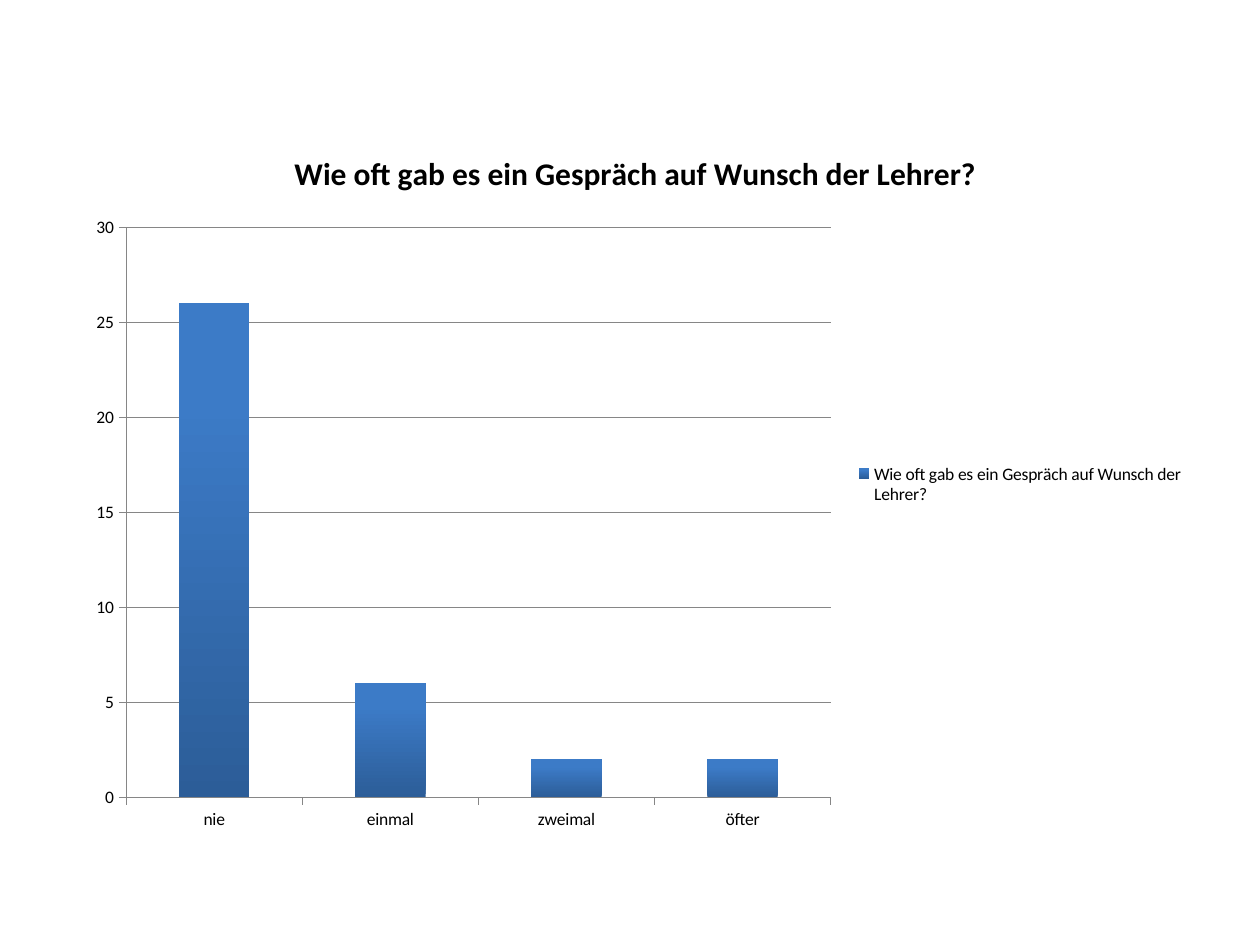
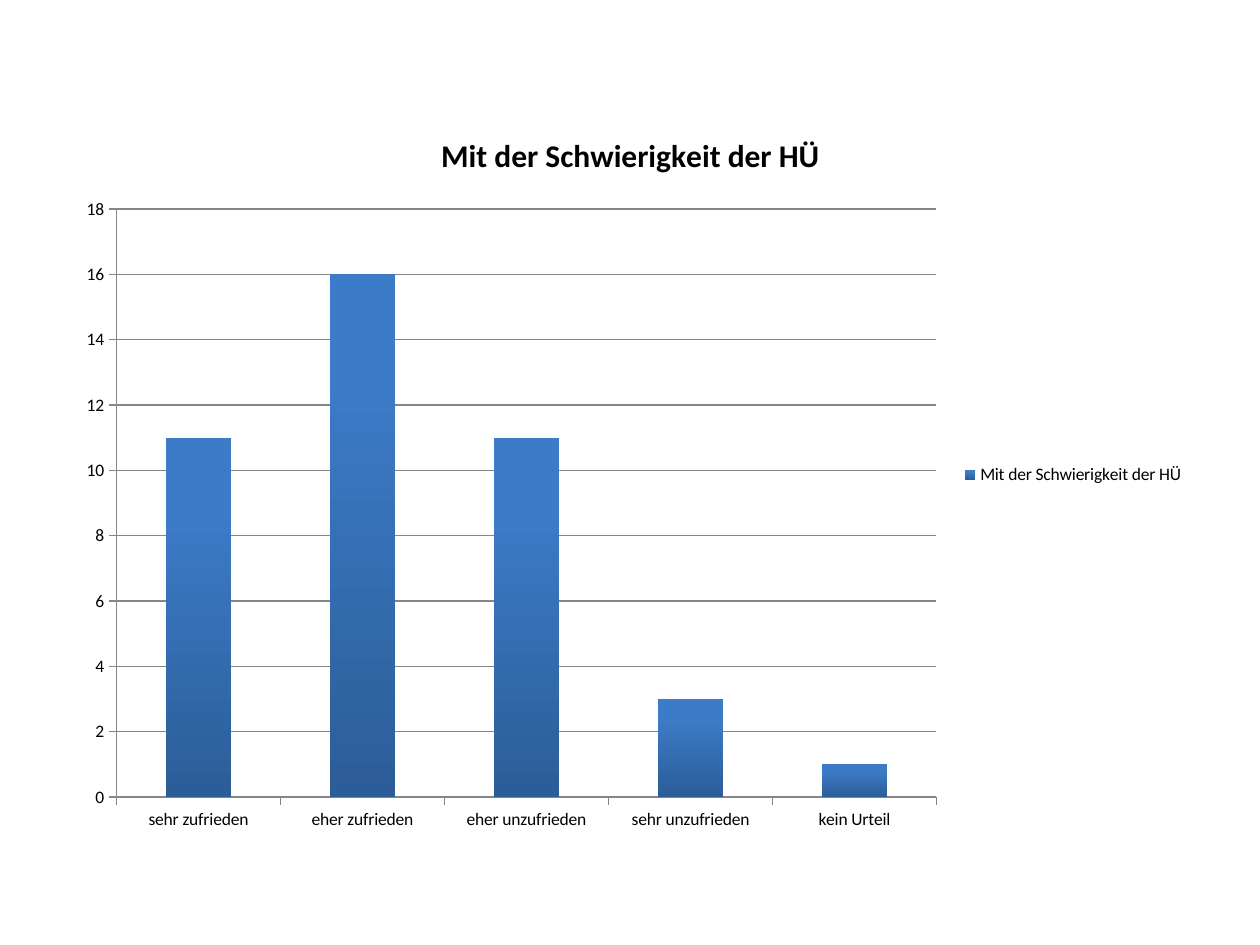
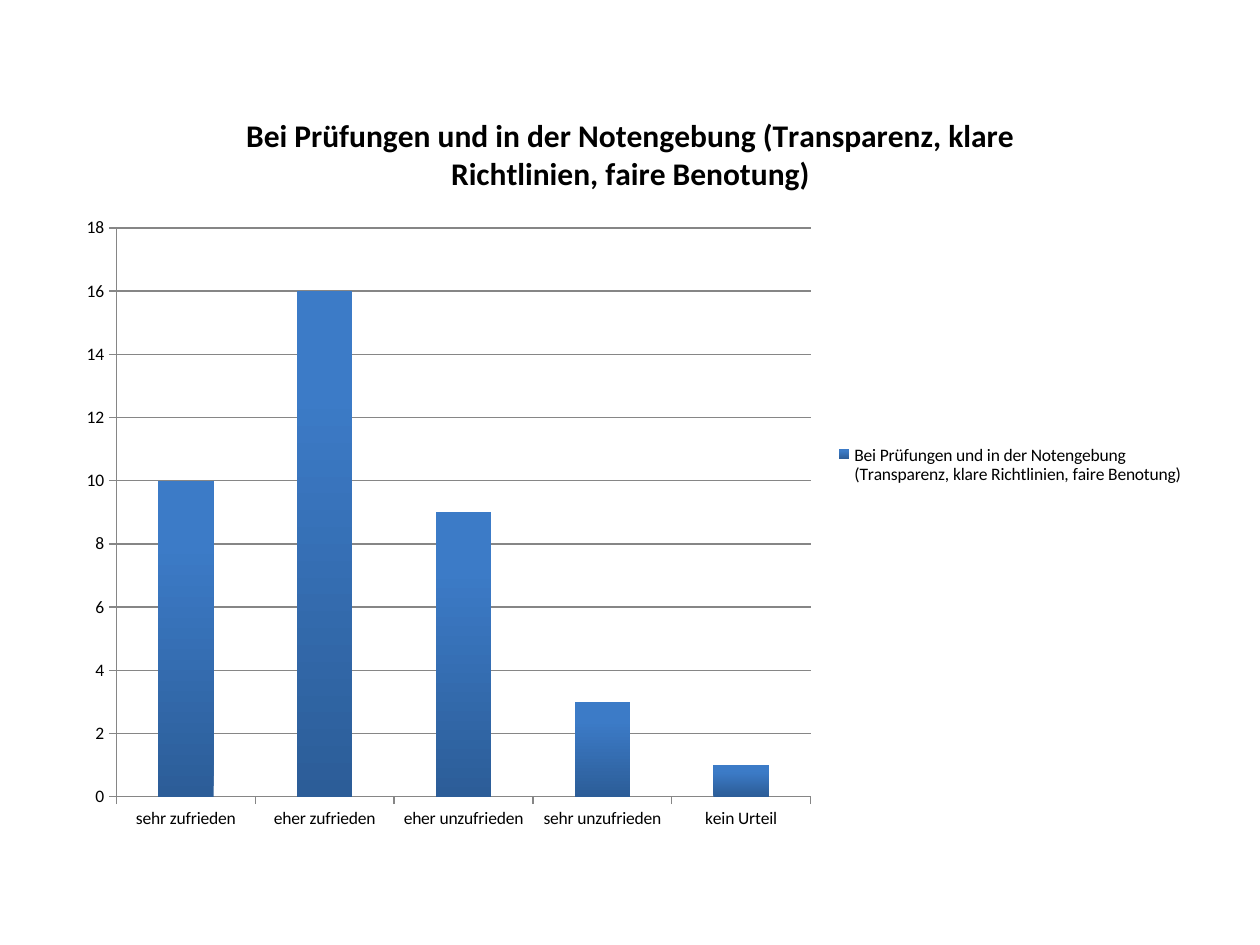
from dataclasses import dataclass

from pptx import Presentation
from pptx.chart.data import CategoryChartData
from pptx.dml.color import RGBColor
from pptx.enum.chart import XL_CHART_TYPE, XL_LEGEND_POSITION, XL_TICK_MARK
from pptx.util import Emu, Pt

PX_PER_INCH = 126
RIGHT, BOTTOM = 1197, 844


@dataclass(frozen=True)
class Theme:
    font: str = "Calibri"
    text: RGBColor = RGBColor.from_string("000000")
    line: RGBColor = RGBColor.from_string("868686")
    bar_bottom: RGBColor = RGBColor.from_string("2C5D98")
    bar_top: RGBColor = RGBColor.from_string("3C7BC7")
    title_size: int = 18
    label_size: int = 10
    gap_width: int = 150


THEME = Theme()
FREQUENCY = ("nie", "einmal", "zweimal", "öfter")
SATISFACTION = ("sehr zufrieden", "eher zufrieden", "eher unzufrieden",
                "sehr unzufrieden", "kein Urteil")


@dataclass(frozen=True)
class Question:
    wording: str
    answers: tuple
    counts: tuple
    left: int
    top: int
    scale_max: int
    scale_step: int


QUESTIONS = (
    Question("Wie oft gab es ein Gespräch auf Wunsch der Lehrer?",
             FREQUENCY, (26, 6, 2, 2), 74, 125, 30, 5),
    Question("Mit der Schwierigkeit der HÜ",
             SATISFACTION, (11, 16, 11, 3, 1), 64, 106, 18, 2),
    Question("Bei Prüfungen und in der Notengebung "
             "(Transparenz, klare Richtlinien, faire Benotung)",
             SATISFACTION, (10, 16, 9, 3, 1), 64, 86, 18, 2),
)


def px(length):
    return Emu(round(length * 914400 / PX_PER_INCH))


def style_font(font, size, bold=False):
    font.name = THEME.font
    font.size = Pt(size)
    font.bold = bold
    font.color.rgb = THEME.text


def style_line(line):
    line.color.rgb = THEME.line
    line.width = Pt(0.75)


def style_title(chart, wording):
    chart.has_title = True
    heading = chart.chart_title.text_frame
    heading.text = wording
    style_font(heading.paragraphs[0].font, THEME.title_size, bold=True)


def style_axes(chart, question):
    for axis in (chart.category_axis, chart.value_axis):
        axis.major_tick_mark = XL_TICK_MARK.OUTSIDE
        axis.minor_tick_mark = XL_TICK_MARK.NONE
        style_line(axis.format.line)
    counts_axis = chart.value_axis
    counts_axis.minimum_scale = 0
    counts_axis.maximum_scale = question.scale_max
    counts_axis.major_unit = question.scale_step
    counts_axis.has_major_gridlines = True
    style_line(counts_axis.major_gridlines.format.line)


def style_bars(chart):
    plot = chart.plots[0]
    plot.gap_width = THEME.gap_width
    plot.vary_by_categories = False
    fill = plot.series[0].format.fill
    fill.gradient()
    fill.gradient_angle = 90
    shades = ((0, THEME.bar_bottom), (0.8, THEME.bar_top))
    for stop, (position, shade) in zip(fill.gradient_stops, shades):
        stop.position = position
        stop.color.rgb = shade


def style_legend(chart):
    chart.has_legend = True
    chart.legend.position = XL_LEGEND_POSITION.RIGHT
    chart.legend.include_in_layout = False


def add_question_chart(slide, question, left, top, width, height):
    results = CategoryChartData()
    results.categories = question.answers
    results.add_series(question.wording, question.counts)
    chart = slide.shapes.add_chart(
        XL_CHART_TYPE.COLUMN_CLUSTERED,
        px(left), px(top), px(width), px(height), results).chart
    style_font(chart.font, THEME.label_size)
    style_title(chart, question.wording)
    style_axes(chart, question)
    style_bars(chart)
    style_legend(chart)


def main():
    deck = Presentation()
    deck.slide_width, deck.slide_height = px(1260), px(945)
    for question in QUESTIONS:
        slide = deck.slides.add_slide(deck.slide_layouts[6])
        add_question_chart(slide, question, question.left, question.top,
                           RIGHT - question.left, BOTTOM - question.top)
    deck.save("out.pptx")


if __name__ == "__main__":
    main()
